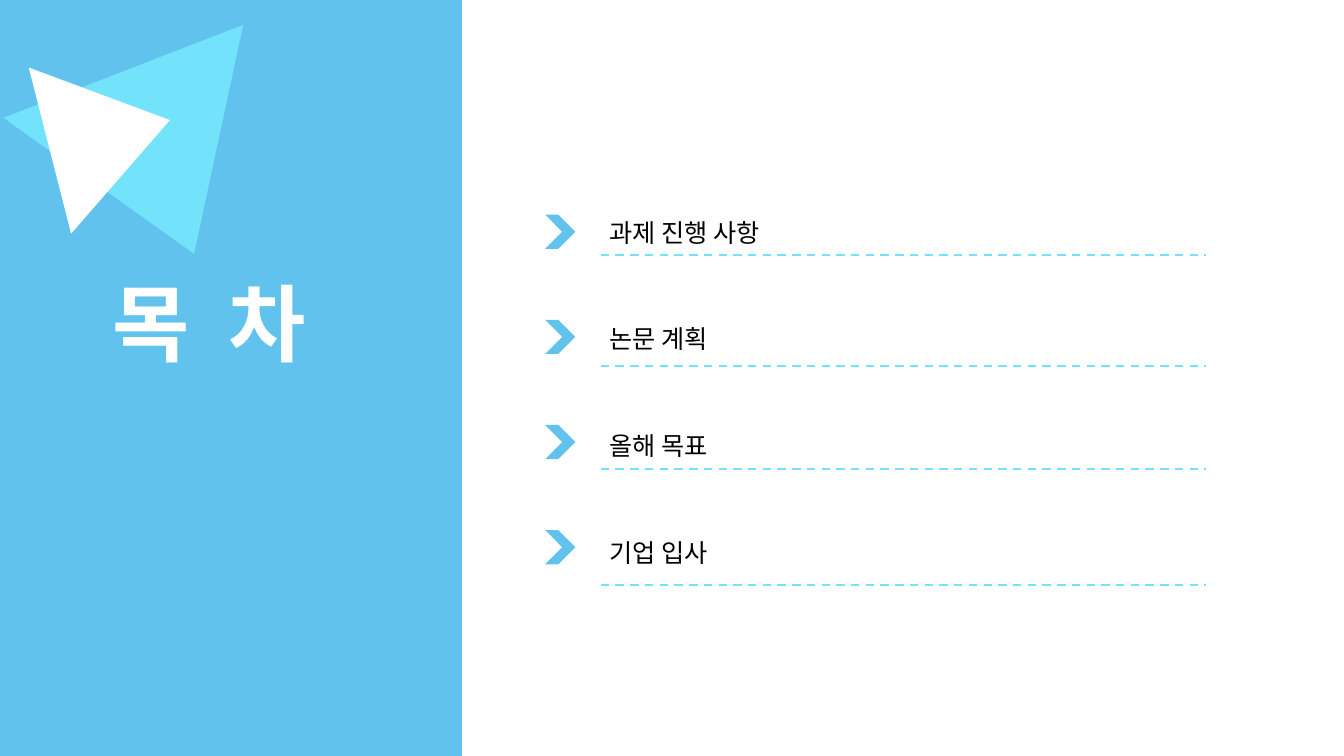
from lxml.etree import SubElement
from pptx import Presentation
from pptx.dml.color import RGBColor
from pptx.enum.dml import MSO_LINE_DASH_STYLE as Dash
from pptx.enum.shapes import MSO_CONNECTOR as Connector, MSO_SHAPE as Shape
from pptx.enum.text import MSO_AUTO_SIZE as AutoSize
from pptx.oxml.ns import qn
from pptx.util import Cm, Pt

TITLE = "목  차"
ENTRIES = [
    ("과제 진행 사항", 6.43),
    ("논문 계획", 9.22),
    ("올해 목표", 11.81),
    ("기업 입사", 14.73),
]
COLOURS = {"blue": "61C2ED", "cyan": "72E3FA", "white": "FFFFFF", "black": "000000"}
FONT = "Noto Sans CJK KR"
TRIANGLES = [
    ((0.76, 1.63, 6.48, 4.93), 158.8, "cyan"),
    ((0.61, 1.85, 4.32, 3.12), 75.7, "white"),
]
CHEVRON_LEFT, CHEVRON_TOP, CHEVRON_STEP = 13.74, 5.41, 2.65
LABEL_LEFT, LABEL_TOP, LABEL_STEP = 15.1, 5.34, 2.69
RULE_LEFT, RULE_RIGHT = 15.14, 30.38


def colour(name):
    return RGBColor.from_string(COLOURS[name])


def add_filled(shapes, kind, place, fill, adjust=None, turn=0):
    shape = shapes.add_shape(kind, *map(Cm, place))
    shape.shadow.inherit = False
    shape.fill.solid()
    shape.fill.fore_color.rgb = colour(fill)
    shape.line.fill.background()
    shape.rotation = turn
    if adjust is not None:
        shape.adjustments[0] = adjust


def add_text(shapes, place, text, size, ink, bold=False):
    box = shapes.add_textbox(*map(Cm, place))
    frame = box.text_frame
    frame.word_wrap = True
    frame.auto_size = AutoSize.SHAPE_TO_FIT_TEXT
    para = frame.paragraphs[0]
    para.text = text
    font = para.font
    font.size, font.bold, font.name = Pt(size), bold, FONT
    font.color.rgb = colour(ink)
    properties = para._p.pPr.find(qn("a:defRPr"))
    SubElement(properties, qn("a:ea"), typeface=FONT)


def add_rule(shapes, top):
    rule = shapes.add_connector(
        Connector.STRAIGHT, Cm(RULE_LEFT), Cm(top), Cm(RULE_RIGHT), Cm(top))
    rule.line.color.rgb = colour("cyan")
    rule.line.width = Pt(1.5)
    rule.line.dash_style = Dash.DASH
    SubElement(rule._element.spPr, qn("a:effectLst"))


def main():
    """Build the contents slide."""
    deck = Presentation()
    deck.slide_width, deck.slide_height = Cm(33.87), Cm(19.05)
    page = deck.slides.add_slide(deck.slide_layouts[6])

    panel = page.shapes.add_group_shape().shapes
    add_filled(panel, Shape.ROUNDED_RECTANGLE, (0, 0, 11.64, 19.05), "blue", adjust=0)
    for place, turn, fill in TRIANGLES:
        add_filled(panel, Shape.ISOSCELES_TRIANGLE, place, fill, turn=turn)
    add_text(panel, (2.59, 6.71, 6.48, 2.82), TITLE, 60, "white", bold=True)

    for index, (label, rule_top) in enumerate(ENTRIES):
        chevron_top = CHEVRON_TOP + index * CHEVRON_STEP
        label_top = LABEL_TOP + index * LABEL_STEP
        add_filled(page.shapes, Shape.CHEVRON,
                   (CHEVRON_LEFT, chevron_top, 0.76, 0.86), "blue", adjust=0.565)
        add_rule(page.shapes, rule_top)
        add_text(page.shapes, (LABEL_LEFT, label_top, 14.83, 1.02), label, 18, "black")

    deck.save("out.pptx")


if __name__ == "__main__":
    main()
